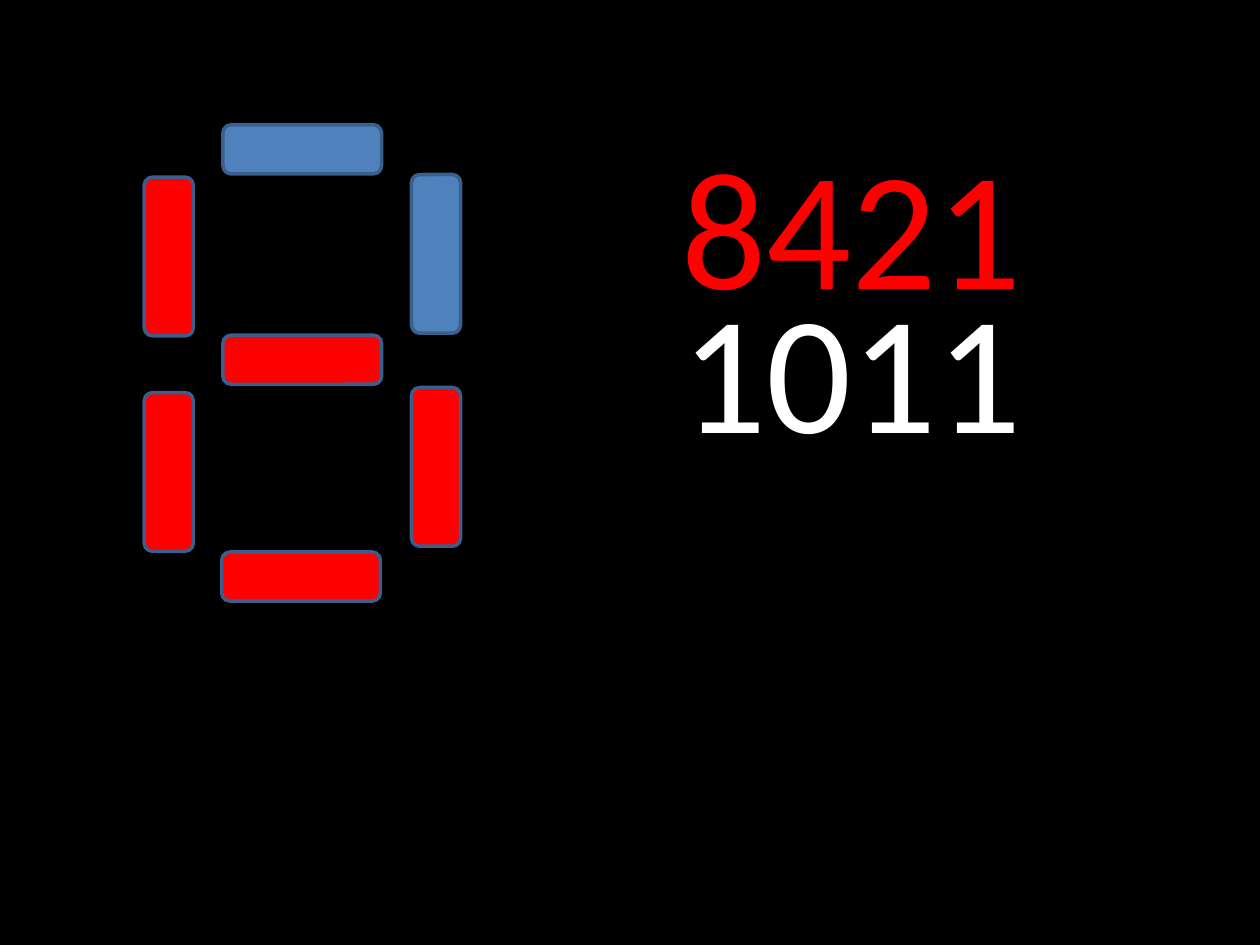
"""Build a slide with a seven-segment digit and its 8421 binary code."""
from pptx import Presentation
from pptx.dml.color import RGBColor
from pptx.enum.shapes import MSO_SHAPE as Shape
from pptx.enum.text import MSO_AUTO_SIZE as AutoSize
from pptx.util import Pt

BLACK = RGBColor(0x00, 0x00, 0x00)
WHITE = RGBColor(0xFF, 0xFF, 0xFF)
RED = RGBColor(0xFF, 0x00, 0x00)
BLUE = RGBColor(0x4F, 0x81, 0xBD)
EDGE = RGBColor(0x3A, 0x5F, 0x8C)

LENGTH, THICKNESS = 90.7, 28.1
MIDDLE_X, LEFT_X, RIGHT_X = 127.4, 51.1, 203.8
SEGMENTS = [
    (MIDDLE_X, 71.3, 0, BLUE),
    (MIDDLE_X, 191.5, 0, RED),
    (126.7, 315.4, 0, RED),
    (RIGHT_X, 252.7, 270, RED),
    (LEFT_X, 255.6, 270, RED),
    (RIGHT_X, 131, 270, BLUE),
    (LEFT_X, 132.5, 270, RED),
]


class SlideBuilder:
    """Hold the style and the current slide."""

    font = {"name": "Calibri", "size": Pt(96)}

    def __init__(self, prs):
        self.s = prs.slides.add_slide(prs.slide_layouts[6])
        fill = self.s.background.fill
        fill.solid()
        fill.fore_color.rgb = BLACK

    def segment(self, x, y, rotation, color):
        sp = self.s.shapes.add_shape(
            Shape.ROUNDED_RECTANGLE, Pt(x), Pt(y), Pt(LENGTH), Pt(THICKNESS))
        sp.rotation = rotation
        sp.shadow.inherit = False
        sp.fill.solid()
        sp.fill.fore_color.rgb = color
        sp.line.color.rgb = EDGE
        sp.line.width = Pt(2)

    def digits(self, text, y, height, color, auto_size):
        sp = self.s.shapes.add_textbox(Pt(382.3), Pt(y), Pt(278), Pt(height))
        tf = sp.text_frame
        tf.word_wrap = True
        tf.auto_size = auto_size
        r = tf.paragraphs[0].add_run()
        r.text = text
        for name, value in self.font.items():
            setattr(r.font, name, value)
        r.font.color.rgb = color


def main():
    prs = Presentation()
    prs.slide_width, prs.slide_height = Pt(720), Pt(540)
    slide = SlideBuilder(prs)
    slide.digits("8421", 66.2, 239.8, RED, AutoSize.NONE)
    for segment in SEGMENTS:
        slide.segment(*segment)
    slide.digits("1011", 148.3, 123.8, WHITE, AutoSize.SHAPE_TO_FIT_TEXT)
    prs.save("out.pptx")


if __name__ == "__main__":
    main()
